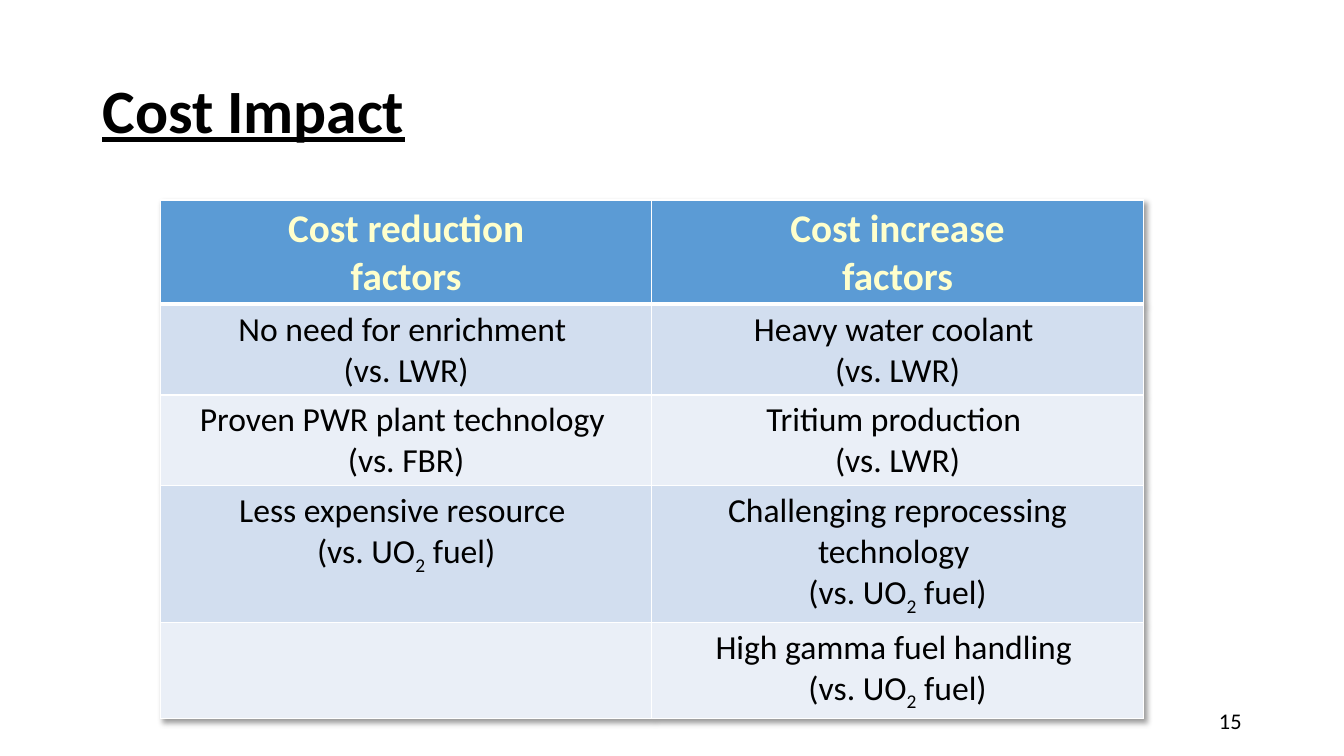
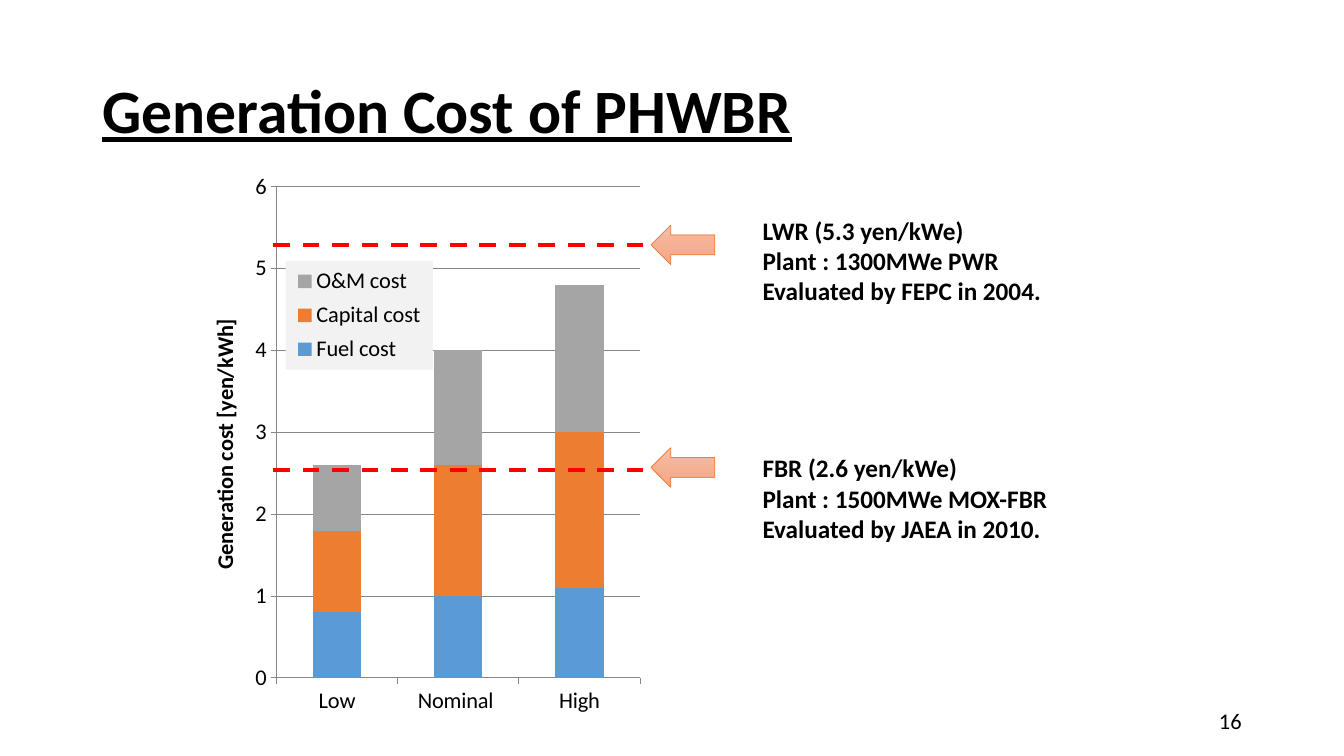
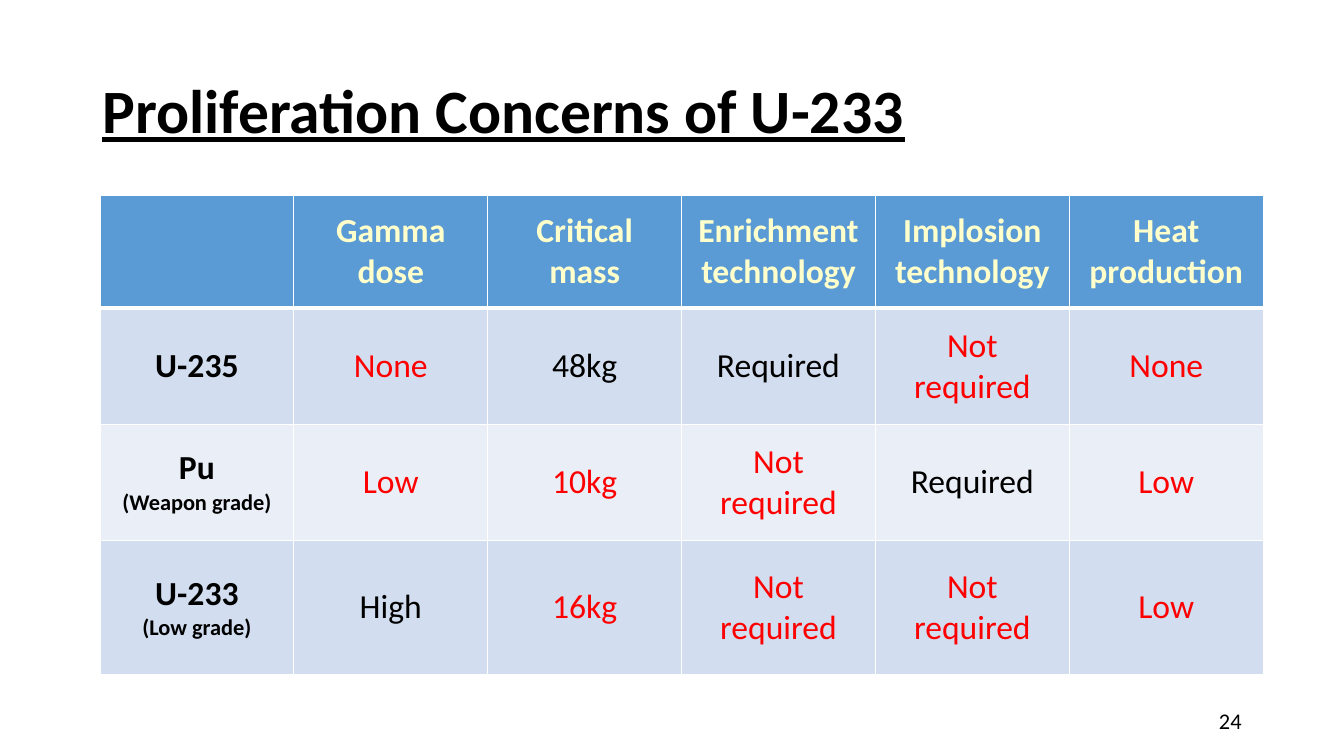
from copy import deepcopy
from dataclasses import dataclass, field

from lxml import etree
from pptx import Presentation
from pptx import util as u
from pptx.chart.data import CategoryChartData
from pptx.dml.color import RGBColor
from pptx.enum import chart as ch, dml, shapes, text
from pptx.oxml import parse_xml
from pptx.oxml.ns import nsdecls, qn

COLOURS = {
    "text": "000000", "head_text": "FFFFCC", "alert": "FF0000", "border": "FFFFFF",
    "head": "5B9BD5", "odd": "D2DEEF", "even": "EAEFF7",
    "fuel": "5B9BD5", "capital": "ED7D31", "om": "A5A5A5",
    "axis": "868686", "legend": "F2F2F2",
    "arrow_top": "F7BDA5", "arrow_mid": "F5B196", "arrow_end": "F8A582",
}
FONT = "Calibri"
WIDTH, HEIGHT = u.Inches(13.33), u.Inches(7.5)
COLUMNS, ROWS = 160, 90
CENTER, LEFT, RIGHT = text.PP_ALIGN.CENTER, text.PP_ALIGN.LEFT, text.PP_ALIGN.RIGHT
MIDDLE = text.MSO_ANCHOR.MIDDLE


@dataclass
class Grid:
    """A table; heights and places are in grid columns and rows."""
    left: float
    top: float
    width: float
    heights: list[float]
    rows: list[list[str]]
    head_size: int
    anchor: text.MSO_ANCHOR
    alerts: set[str] = field(default_factory=set)
    row_heads: bool = False
    shadow: bool = False


@dataclass
class Reference:
    """A reference cost: dashed line, arrow and explanation."""
    line_top: float
    arrow_top: float
    note_top: float
    note_width: float
    lines: list[str]


def col(n: float) -> int:
    return round(WIDTH * n / COLUMNS)


def row(n: float) -> int:
    return round(HEIGHT * n / ROWS)


def box(left: float, top: float, width: float, height: float) -> tuple[int, int, int, int]:
    return col(left), row(top), col(width), row(height)


def rgb(name: str) -> RGBColor:
    return RGBColor.from_string(COLOURS[name])


def style(font, size: int, bold: bool = False, colour: str = "text", **more) -> None:
    values = {"name": FONT, "size": u.Pt(size), "bold": bold, **more}
    for key, value in values.items():
        setattr(font, key, value)
    font.color.rgb = rgb(colour)


def write(tf, lines: list[str], size: int, align=LEFT, note_size: int = 0, **fmt) -> None:
    """Write one paragraph a line; text between tildes is subscript."""
    for i, line in enumerate(lines):
        p = tf.add_paragraph() if i else tf.paragraphs[0]
        p.alignment = align
        for j, piece in enumerate(line.split("~")):
            r = p.add_run()
            r.text = piece
            style(r.font, note_size if note_size and i else size, **fmt)
            if j % 2:
                r._r.get_or_add_rPr().set("baseline", "-25000")


def new_slide(prs, title: str, number: int):
    slide = prs.slides.add_slide(prs.slide_layouts[5])
    sp = slide.shapes.title
    sp.left, sp.top, sp.width, sp.height = box(11, 4.8, 138, 17.4)
    tf = sp.text_frame
    tf.auto_size, tf.vertical_anchor = text.MSO_AUTO_SIZE.NONE, MIDDLE
    write(tf, [title], 44, bold=True, underline=True)
    tf.paragraphs[0].line_spacing = 0.9
    tf = slide.shapes.add_textbox(*box(113, 83.4, 36, 4.8)).text_frame
    tf.word_wrap, tf.vertical_anchor = True, MIDDLE
    write(tf, [str(number)], 16, RIGHT)
    return slide


def set_borders(cell, widths: dict[str, int]) -> None:
    tc_pr = cell._tc.get_or_add_tcPr()
    for side, points in widths.items():
        tc_pr.append(parse_xml(
            f'<a:ln{side} {nsdecls("a")} w="{u.Pt(points)}"><a:solidFill>'
            f'<a:srgbClr val="{COLOURS["border"]}"/></a:solidFill></a:ln{side}>'))


def add_shadow(frame) -> None:
    tbl_pr = next(frame.element.iter(qn("a:tblPr")))
    tbl_pr.insert(0, parse_xml(
        f'<a:effectLst {nsdecls("a")}><a:outerShdw blurRad="50800" dist="38100" '
        'dir="2700000" algn="tl" rotWithShape="0"><a:srgbClr val="000000">'
        '<a:alpha val="40000"/></a:srgbClr></a:outerShdw></a:effectLst>'))


def add_grid(slide, grid: Grid) -> None:
    count = len(grid.rows[0])
    frame = slide.shapes.add_table(
        len(grid.rows), count, *box(grid.left, grid.top, grid.width, sum(grid.heights)))
    table = frame.table
    table.horz_banding = False
    if grid.shadow:
        add_shadow(frame)
    for column in table.columns:
        column.width = col(grid.width / count)
    for i, (height, texts) in enumerate(zip(grid.heights, grid.rows)):
        table.rows[i].height = row(height)
        for j, words in enumerate(texts):
            cell = table.cell(i, j)
            set_borders(cell, {"L": 1, "R": 1, "T": 3 if i == 1 else 1, "B": 1 if i else 3})
            cell.fill.solid()
            cell.fill.fore_color.rgb = rgb("head" if i == 0 else "odd" if i % 2 else "even")
            cell.vertical_anchor = grid.anchor
            if not words:
                continue
            row_head = grid.row_heads and j == 0
            colour = "head_text" if i == 0 else "alert" if words in grid.alerts else "text"
            write(cell.text_frame, words.split("\n"), 24 if i else grid.head_size, CENTER,
                  note_size=16 if row_head else 0, bold=i == 0 or row_head, colour=colour)


def place(parent, x: float, y: float, w: float, h: float, inner: bool = False) -> None:
    """Give a chart element a manual layout, in shares of the chart."""
    for old in parent.findall(qn("c:layout")):
        parent.remove(old)
    layout = etree.Element(qn("c:layout"))
    manual = etree.SubElement(layout, qn("c:manualLayout"))
    values = {"xMode": "edge", "yMode": "edge", "x": x, "y": y, "w": w, "h": h}
    if inner:
        values = {"layoutTarget": "inner", **values}
    for key, value in values.items():
        etree.SubElement(manual, qn(f"c:{key}")).set("val", str(value))
    position = parent.find(qn("c:legendPos"))
    parent.insert(0 if position is None else 1, layout)


def add_cost_chart(slide) -> None:
    data = CategoryChartData()
    data.categories = ["Low", "Nominal ", "High"]
    series = {
        "Fuel cost": ("fuel", (0.8, 1, 1.1)),
        "Capital cost": ("capital", (1, 1.6, 1.9)),
        "O&M cost": ("om", (0.8, 1.4, 1.8)),
    }
    for name, (_, values) in series.items():
        data.add_series(name, values)
    chart = slide.shapes.add_chart(
        ch.XL_CHART_TYPE.COLUMN_STACKED, *box(23.6, 20.2, 54.8, 68), data).chart
    style(chart.font, 16)
    chart.has_title = False
    plot = chart.plots[0]
    plot.gap_width, plot.overlap, plot.vary_by_categories = 150, 100, False
    for ser, (colour, _) in zip(plot.series, series.values()):
        ser.format.fill.solid()
        ser.format.fill.fore_color.rgb = rgb(colour)

    axis = chart.value_axis
    axis.minimum_scale, axis.maximum_scale, axis.major_unit = 0, 6, 1
    axis.has_major_gridlines = True
    for line in (axis.format.line, axis.major_gridlines.format.line,
                 chart.category_axis.format.line):
        line.color.rgb, line.width = rgb("axis"), u.Pt(0.75)
    for each in (axis, chart.category_axis):
        each.major_tick_mark = ch.XL_TICK_MARK.OUTSIDE
    write(axis.axis_title.text_frame, ["Generation cost [yen/kWh]"], 16, CENTER, bold=True)

    chart.has_legend = True
    legend = chart.legend
    legend.position, legend.include_in_layout = ch.XL_LEGEND_POSITION.RIGHT, False
    style(legend.font, 16)
    element = next(chart.element.iter(qn("c:legend")))
    place(element, 0.19, 0.16, 0.32, 0.19)
    element.find(qn("c:txPr")).addprevious(parse_xml(
        f'<c:spPr {nsdecls("c", "a")}><a:solidFill><a:srgbClr val="{COLOURS["legend"]}"/>'
        '</a:solidFill></c:spPr>'))
    place(next(chart.element.iter(qn("c:plotArea"))), 0.17, 0.03, 0.79, 0.86, inner=True)


def add_reference(slide, ref: Reference) -> None:
    sp = slide.shapes.add_shape(shapes.MSO_SHAPE.LEFT_ARROW, *box(77.5, ref.arrow_top, 7.6, 4.7))
    sp.shadow.inherit = False
    sp.fill.gradient()
    sp.fill.gradient_angle = 270
    stops = next(sp.element.iter(qn("a:gsLst")))
    stops.insert(1, deepcopy(stops[0]))
    for stop, position, colour in zip(
            sp.fill.gradient_stops, (0, 0.5, 1), ("arrow_top", "arrow_mid", "arrow_end")):
        stop.position, stop.color.rgb = position, rgb(colour)
    sp.line.color.rgb, sp.line.width = rgb("capital"), u.Pt(0.5)

    tf = slide.shapes.add_textbox(*box(89.6, ref.note_top, ref.note_width, 12.1)).text_frame
    tf.word_wrap, tf.auto_size = False, text.MSO_AUTO_SIZE.SHAPE_TO_FIT_TEXT
    write(tf, ref.lines, 18, bold=True)

    line = slide.shapes.add_connector(
        shapes.MSO_CONNECTOR.STRAIGHT, col(76.6), row(ref.line_top), col(32.2), row(ref.line_top))
    line.line.color.rgb, line.line.width = rgb("alert"), u.Pt(3)
    line.line.dash_style = dml.MSO_LINE.DASH
    etree.SubElement(line.element.spPr, qn("a:effectLst"))


COST_IMPACT = Grid(
    19.1, 23.8, 117, [12.24, 10.68, 10.68, 15.36, 10.68],
    [
        ["Cost reduction\nfactors", "Cost increase\nfactors"],
        ["No need for enrichment \n(vs. LWR)", "Heavy water coolant \n(vs. LWR)"],
        ["Proven PWR plant technology \n(vs. FBR)", "Tritium production \n(vs. LWR)"],
        ["Less expensive resource \n(vs. UO~2~ fuel)",
         "Challenging reprocessing technology \n(vs. UO~2~ fuel)"],
        ["", "High gamma fuel handling \n(vs. UO~2~ fuel)"],
    ],
    head_size=28, anchor=text.MSO_ANCHOR.TOP, shadow=True)

PROLIFERATION = Grid(
    11.9, 23.3, 138.5, [13.4, 13.8, 13.8, 16],
    [
        ["", "Gamma dose", "Critical\nmass", "Enrichment\ntechnology",
         "Implosion\ntechnology", "Heat\nproduction"],
        ["U-235", "None", "48kg", "Required", "Not required", "None"],
        ["Pu\n(Weapon grade)", "Low", "10kg", "Not required", "Required", "Low"],
        ["U-233\n(Low grade)", "High", "16kg", "Not required", "Not required", "Low"],
    ],
    head_size=24, anchor=MIDDLE, row_heads=True,
    alerts={"None", "Low", "10kg", "16kg", "Not required"})

REFERENCES = [
    Reference(29.2, 26.8, 25, 35.9,
              ["LWR (5.3 yen/kWe)", "Plant : 1300MWe PWR", "Evaluated by FEPC in 2004."]),
    Reference(56, 53.3, 53.3, 36.7,
              ["FBR (2.6 yen/kWe)", "Plant : 1500MWe MOX-FBR", "Evaluated by JAEA in 2010."]),
]


def main() -> None:
    prs = Presentation()
    prs.slide_width, prs.slide_height = WIDTH, HEIGHT
    add_grid(new_slide(prs, "Cost Impact", 15), COST_IMPACT)
    slide = new_slide(prs, "Generation Cost of PHWBR", 16)
    add_cost_chart(slide)
    for ref in REFERENCES:
        add_reference(slide, ref)
    add_grid(new_slide(prs, "Proliferation Concerns of U-233", 24), PROLIFERATION)
    prs.save("out.pptx")


if __name__ == "__main__":
    main()
